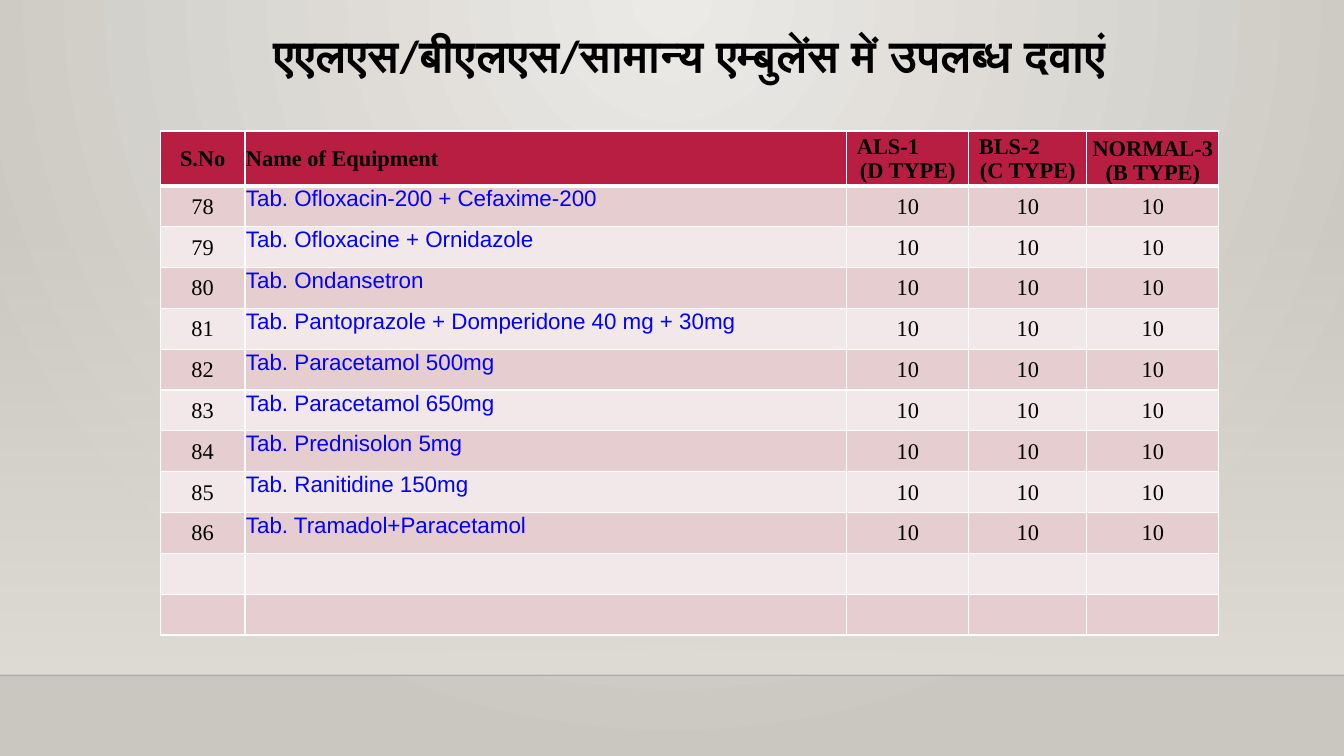
from lxml.etree import SubElement
from pptx import Presentation
from pptx.dml.color import RGBColor
from pptx.enum.shapes import MSO_CONNECTOR, MSO_SHAPE
from pptx.enum.text import MSO_ANCHOR, PP_ALIGN
from pptx.oxml import parse_xml
from pptx.oxml.ns import nsdecls, qn
from pptx.util import Inches, Pt

TITLE = "एएलएस/बीएलएस/सामान्य एम्बुलेंस में उपलब्ध दवाएं"
HEADINGS = [["S.No"], ["Name of Equipment"], ["ALS-1", "(D TYPE)"],
            ["BLS-2", "(C TYPE)"], ["NORMAL-3", "(B TYPE)"]]
MEDICINES = [
    "Tab. Ofloxacin-200 + Cefaxime-200",
    "Tab. Ofloxacine + Ornidazole",
    "Tab. Ondansetron",
    "Tab. Pantoprazole + Domperidone 40 mg + 30mg",
    "Tab. Paracetamol 500mg",
    "Tab. Paracetamol 650mg",
    "Tab. Prednisolon 5mg",
    "Tab. Ranitidine 150mg",
    "Tab. Tramadol+Paracetamol",
]
FIRST_NUMBER = 78
QUANTITY = "10"
SPARE_ROWS = 2
COLUMN_WIDTHS = [0.84, 5.97, 1.21, 1.17, 1.31]
HEADER_HEIGHT = 0.51
BODY_HEIGHT = 4.46
LINEAR_DOWN = '<a:lin ang="5400000" scaled="0"/>'
RADIAL_FROM_TOP = ('<a:path path="circle"><a:fillToRect l="43000" t="0" '
                   'r="43000" b="100000"/></a:path>')


def color(value):
    """Turn a hex string into a colour."""
    return RGBColor.from_string(value)


class AmbulanceSlide:
    """Hold the style and the current slide."""

    serif, sans, heading_font = "Times New Roman", "Arial", "Calibri"
    black, blue, white = "000000", "0000FF", "FFFFFF"
    crimson, bands = "B71E42", ("E6CDCF", "F3E8E9")
    text_size = 16

    def __init__(self, presentation):
        """Add a blank slide to the presentation."""
        self.slide = presentation.slides.add_slide(presentation.slide_layouts[6])

    def gradient(self, fill, properties, stops, direction):
        """Replace a fill with a gradient of (position, colour, alpha) stops."""
        fill.solid()
        stop_xml = "".join(
            f'<a:gs pos="{position * 1000}"><a:srgbClr val="{tone}">'
            f'<a:alpha val="{alpha * 1000}"/></a:srgbClr></a:gs>'
            for position, tone, alpha in stops)
        gradient = parse_xml(f'<a:gradFill {nsdecls("a")} rotWithShape="1">'
                             f'<a:gsLst>{stop_xml}</a:gsLst>{direction}</a:gradFill>')
        solid = properties.find(qn("a:solidFill"))
        properties.replace(solid, gradient)

    def background(self):
        """Light the slide from the top centre."""
        backdrop = self.slide.background
        fill = backdrop.fill
        fill.solid()
        properties = self.slide.element.cSld.find(qn("p:bg")).find(qn("p:bgPr"))
        self.gradient(fill, properties,
                      [(0, "ECEAE7", 100), (100, "CAC7C1", 100)], RADIAL_FROM_TOP)

    def wall(self, left, top, width, height):
        """Draw a panel that fades in towards the floor."""
        panel = self.slide.shapes.add_shape(
            MSO_SHAPE.RECTANGLE, Inches(left), Inches(top), Inches(width), Inches(height))
        panel.shadow.inherit = False
        panel.line.fill.background()
        self.gradient(panel.fill, panel.element.spPr,
                      [(0, "DFDBD5", 0), (100, "DFDBD5", 100)], LINEAR_DOWN)

    def floor_line(self, left, right, y):
        """Draw the faint line where wall and floor meet."""
        edge = self.slide.shapes.add_connector(
            MSO_CONNECTOR.STRAIGHT, Inches(left), Inches(y), Inches(right), Inches(y))
        edge.line.width = Pt(1)
        edge.line.color.rgb = color("000001")
        properties = edge.element.spPr
        tone = next(properties.iter(qn("a:srgbClr")))
        SubElement(tone, qn("a:alpha")).set("val", "20000")
        SubElement(properties, qn("a:effectLst"))

    def run(self, paragraph, text, font, size, tone, bold=False):
        """Add a styled run to a paragraph."""
        run = paragraph.add_run()
        run.text = text
        run.font.name = font
        run.font.size = Pt(size)
        run.font.bold = bold
        run.font.color.rgb = color(tone)

    def title(self, text, left, top, width, height):
        """Write the centred heading."""
        frame = self.slide.shapes.add_textbox(
            Inches(left), Inches(top), Inches(width), Inches(height)).text_frame
        frame.word_wrap = True
        frame.vertical_anchor = MSO_ANCHOR.TOP
        heading = frame.paragraphs[0]
        heading.alignment = PP_ALIGN.CENTER
        heading.line_spacing = 0.9
        self.run(heading, text, self.heading_font, 32, self.black, True)

    def cell(self, cell, fill, anchor, top_width=1, bottom_width=1):
        """Set the margins, borders and fill of a cell."""
        cell.margin_left = cell.margin_right = cell.margin_top = Inches(0.01)
        cell.margin_bottom = 0
        cell.vertical_anchor = anchor
        properties = cell._tc.get_or_add_tcPr()
        widths = {"lnL": 1, "lnR": 1, "lnT": top_width, "lnB": bottom_width}
        for side, width in widths.items():
            properties.append(parse_xml(
                f'<a:{side} {nsdecls("a")} w="{Pt(width)}"><a:solidFill>'
                f'<a:srgbClr val="{self.white}"/></a:solidFill></a:{side}>'))
        cell.fill.solid()
        cell.fill.fore_color.rgb = color(fill)

    def header(self, cell, column, lines):
        """Write one column heading, staggered for the ALS and BLS columns."""
        anchor = MSO_ANCHOR.BOTTOM if column == 4 else MSO_ANCHOR.MIDDLE
        self.cell(cell, self.crimson, anchor, bottom_width=3)
        for index, text in enumerate(lines):
            frame = cell.text_frame
            paragraph = frame.add_paragraph() if index else frame.paragraphs[0]
            staggered = column in (2, 3) and index == 0
            left_aligned = column == 1 or staggered
            paragraph.alignment = PP_ALIGN.LEFT if left_aligned else PP_ALIGN.CENTER
            if staggered:
                paragraph._p.get_or_add_pPr().set("marL", str(Inches(0.09)))
            self.run(paragraph, text, self.serif, self.text_size, self.black, True)

    def entry(self, cell, row, column, text):
        """Write one body cell."""
        is_name = column == 1
        self.cell(cell, self.bands[(row - 1) % 2],
                  MSO_ANCHOR.TOP if is_name else MSO_ANCHOR.MIDDLE,
                  top_width=3 if row == 1 else 1)
        paragraph = cell.text_frame.paragraphs[0]
        paragraph.alignment = PP_ALIGN.LEFT if is_name else PP_ALIGN.CENTER
        if text:
            self.run(paragraph, text, self.sans if is_name else self.serif,
                     self.text_size, self.blue if is_name else self.black)

    def medicine_table(self, left, top, entries):
        """Draw the headings and the rows of medicines."""
        table = self.slide.shapes.add_table(
            len(entries) + 1, len(HEADINGS), Inches(left), Inches(top),
            Inches(sum(COLUMN_WIDTHS)), Inches(HEADER_HEIGHT + BODY_HEIGHT)).table
        table.horz_banding = False
        for column, width in enumerate(COLUMN_WIDTHS):
            table.columns[column].width = Inches(width)
            self.header(table.cell(0, column), column, HEADINGS[column])
        table.rows[0].height = Inches(HEADER_HEIGHT)
        for row, values in enumerate(entries, 1):
            table.rows[row].height = Inches(BODY_HEIGHT / len(entries))
            for column, text in enumerate(values):
                self.entry(table.cell(row, column), row, column, text)


def main():
    """Build and save the slide."""
    presentation = Presentation()
    presentation.slide_width = Inches(13.33)
    presentation.slide_height = Inches(7.5)
    page = AmbulanceSlide(presentation)
    page.background()
    page.wall(0, 2.21, 13.33, 4.49)
    page.floor_line(0, 13.33, 6.7)
    page.title(TITLE, 1.59, 0.29, 10.5, 1.15)
    entries = [[str(number), name] + [QUANTITY] * 3
               for number, name in enumerate(MEDICINES, FIRST_NUMBER)]
    entries += [[""] * len(HEADINGS)] * SPARE_ROWS
    page.medicine_table(1.59, 1.3, entries)
    presentation.save("out.pptx")


if __name__ == "__main__":
    main()
